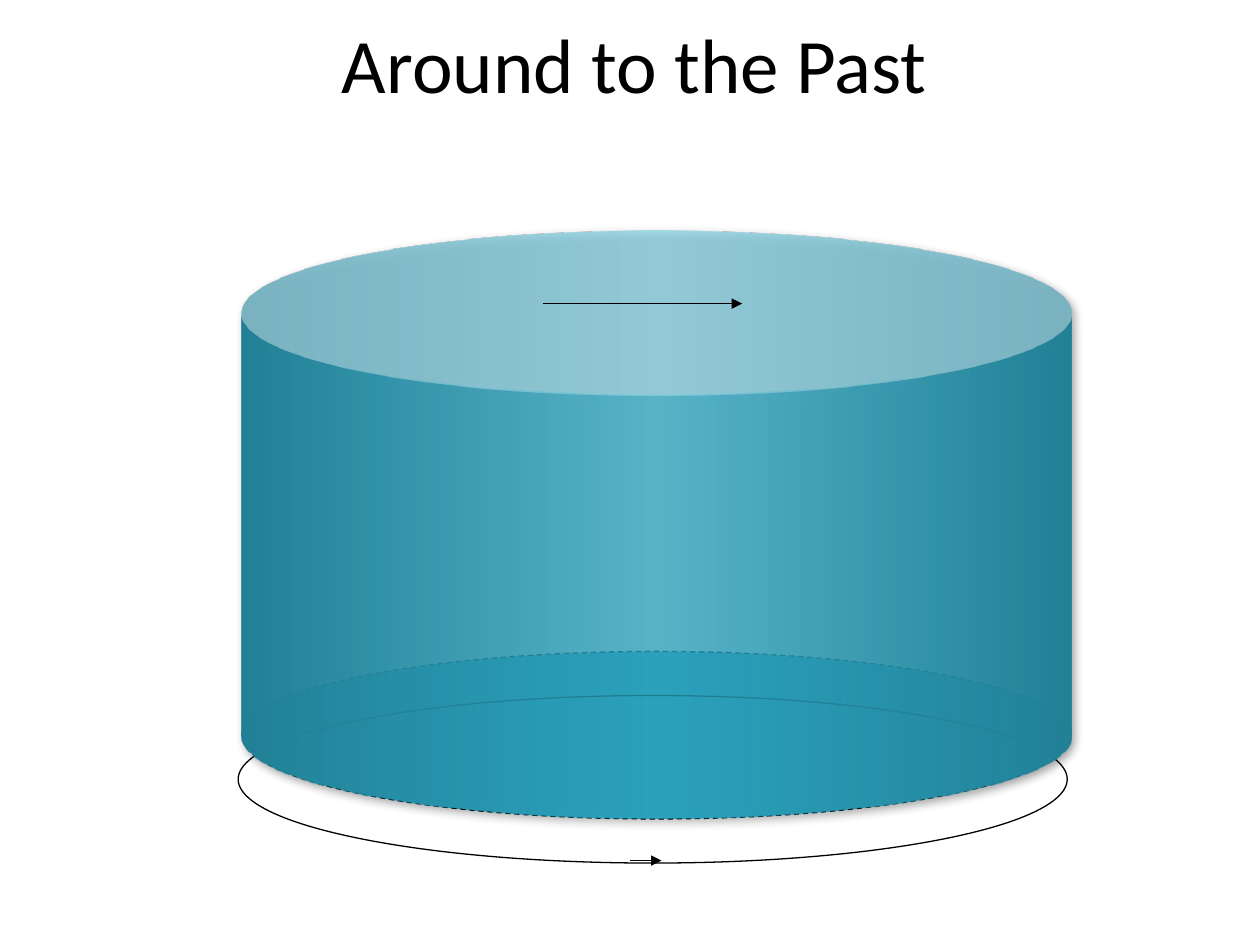
from pptx import Presentation
from pptx.dml.color import RGBColor
from pptx.enum.dml import MSO_LINE
from pptx.enum.shapes import MSO_CONNECTOR, MSO_SHAPE
from pptx.enum.text import MSO_ANCHOR, PP_ALIGN
from pptx.oxml import parse_xml
from pptx.oxml.ns import nsdecls, qn
from pptx.util import Pt

PX = 9144  # 100 px to the inch
OVAL, CAN = MSO_SHAPE.OVAL, MSO_SHAPE.CAN
STRAIGHT = MSO_CONNECTOR.STRAIGHT
DASH = MSO_LINE.DASH
BLACK, TEAL, DARK_TEAL = "000000", "2FAFCC", "228096"


def color(hex_value):
    return RGBColor.from_string(hex_value)


def add_shape(kind, *box):
    shape = slide.shapes.add_shape(kind, *(value * PX for value in box))
    shape.shadow.inherit = False
    return shape


presentation = Presentation()
presentation.slide_width = 1000 * PX
presentation.slide_height = 750 * PX
slide = presentation.slides.add_slide(presentation.slide_layouts[6])

# Base of the cylinder and the path around it
base = add_shape(OVAL, 192, 517, 658, 133)
base.fill.solid()
base.fill.fore_color.rgb = color(TEAL)
base.line.dash_style = DASH
path_around = add_shape(OVAL, 189, 552, 658, 133)
path_around.fill.background()
for ellipse in (base, path_around):
    ellipse.line.color.rgb = color(BLACK)
    ellipse.line.width = Pt(0.75)

# Translucent cylinder between the lower and the upper arrow
cylinder = None
for left, right, y in ((500, 525, 683), (431, 589, 241)):
    if cylinder is None and y < 517:
        cylinder = add_shape(CAN, 192, 183, 658, 467)
    arrow = slide.shapes.add_connector(
        STRAIGHT, left * PX, y * PX, right * PX, y * PX)
    arrow.line.color.rgb = color(BLACK)
    arrow.line.width = Pt(0.75)
    properties = arrow._element.spPr
    properties.find(qn("a:ln")).append(
        parse_xml(f'<a:tailEnd {nsdecls("a")} type="triangle"/>'))
    properties.append(parse_xml(f'<a:effectLst {nsdecls("a")}/>'))

cylinder.adjustments[0] = 0.28
cylinder.line.fill.background()
properties = cylinder._element.spPr
stops = "".join(
    f'<a:gs pos="{position * 1000}"><a:srgbClr val="{value}">'
    f'<a:alpha val="{alpha * 1000}"/></a:srgbClr></a:gs>'
    for position, value, alpha in (
        (0, DARK_TEAL, 100), (50, TEAL, 70), (100, DARK_TEAL, 100)))
properties.find(qn("a:prstGeom")).addnext(parse_xml(
    f'<a:gradFill {nsdecls("a")} rotWithShape="1"><a:gsLst>{stops}</a:gsLst>'
    '<a:lin ang="0" scaled="0"/></a:gradFill>'))
properties.find(qn("a:effectLst")).append(parse_xml(
    f'<a:outerShdw {nsdecls("a")} blurRad="{Pt(5)}" dist="{Pt(3)}" '
    f'dir="{45 * 60000}" algn="tl" rotWithShape="0"><a:srgbClr val="{BLACK}">'
    '<a:alpha val="36000"/></a:srgbClr></a:outerShdw>'))

# Title
title = slide.shapes.add_textbox(39 * PX, 8 * PX, 929 * PX, 84 * PX)
title.text_frame.word_wrap = True
title.text_frame.vertical_anchor = MSO_ANCHOR.TOP
paragraph = title.text_frame.paragraphs[0]
paragraph.alignment = PP_ALIGN.CENTER
run = paragraph.add_run()
run.text = "Around to the Past"
for name, value in {"name": "Calibri", "size": Pt(44)}.items():
    setattr(run.font, name, value)
run.font.color.rgb = color(BLACK)

presentation.save("out.pptx")
